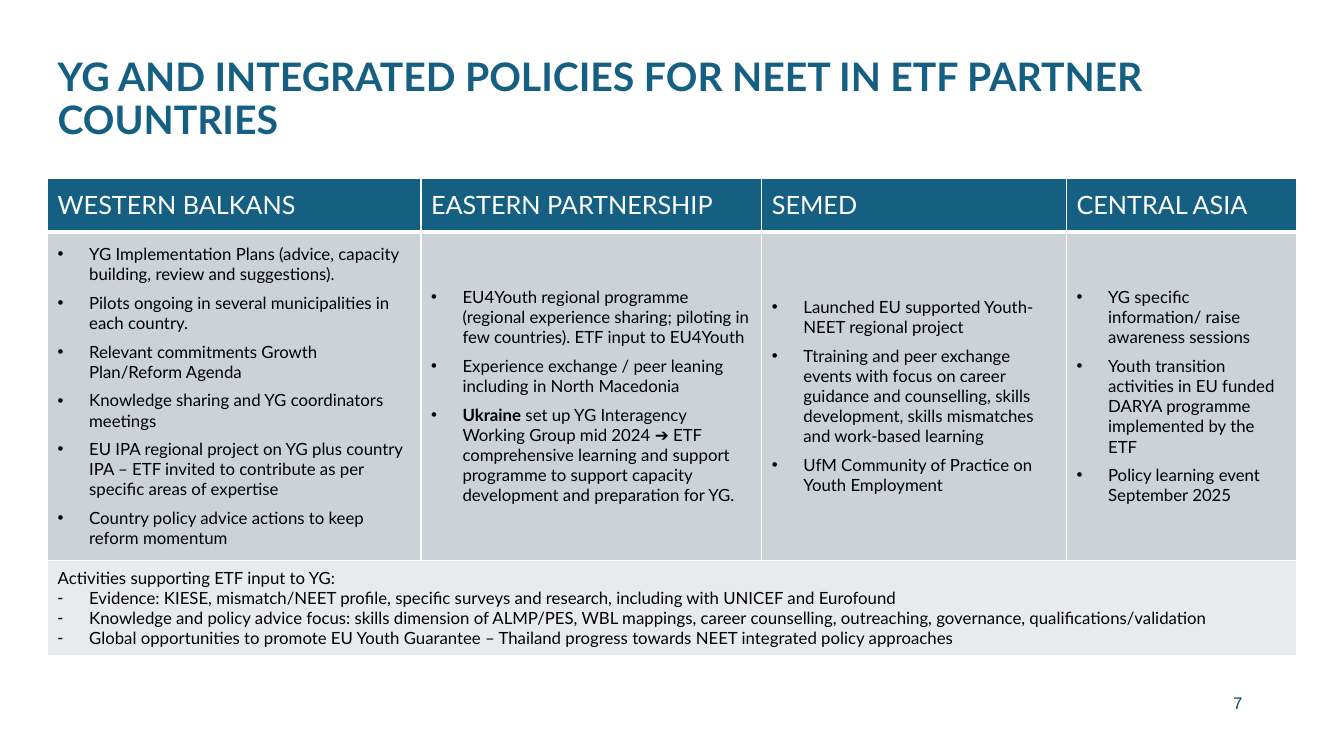
from lxml import etree
from pptx import Presentation
from pptx import util as u
from pptx.dml.color import RGBColor
from pptx.enum import text
from pptx.oxml import ns

COLORS = {"blue": "156082", "grey": "CCD2D8", "pale": "E8EAED",
          "white": "FFFFFF", "black": "000000", "number": "104862"}
INDENT = u.Pt(22.5)
REGIONS = {
    "WESTERN BALKANS": [
        "YG Implementation Plans (advice, capacity building, review and suggestions).",
        "Pilots ongoing in several municipalities in each country.",
        "Relevant commitments Growth Plan/Reform Agenda",
        "Knowledge sharing and YG coordinators meetings",
        "EU IPA regional project on YG plus country IPA – ETF invited to contribute "
        "as per specific areas of expertise",
        "Country policy advice actions to keep reform momentum"],
    "EASTERN PARTNERSHIP": [
        "EU4Youth regional programme (regional experience sharing; piloting in few "
        "countries). ETF input to EU4Youth",
        "Experience exchange / peer leaning including in North Macedonia",
        ("Ukraine", " set up YG Interagency Working Group mid 2024 ➔ ETF comprehensive "
         "learning and support programme to support capacity development and "
         "preparation for YG.")],
    "SEMED": [
        "Launched EU supported Youth-NEET regional project",
        "Ttraining and peer exchange events with focus on career guidance and "
        "counselling, skills development, skills mismatches and work-based learning",
        "UfM Community of Practice on Youth Employment"],
    "CENTRAL ASIA": [
        "YG specific information/ raise awareness sessions",
        "Youth transition activities in EU funded DARYA programme implemented by the ETF",
        "Policy learning event September 2025"],
}
SUPPORT_HEADING = "Activities supporting ETF input to YG:"
SUPPORT = [
    "Evidence: KIESE, mismatch/NEET profile, specific surveys and research, "
    "including with UNICEF and Eurofound",
    "Knowledge and policy advice focus: skills dimension of ALMP/PES, WBL mappings, "
    "career counselling, outreaching, governance, qualifications/validation",
    "Global opportunities to promote EU Youth Guarantee – Thailand progress towards "
    "NEET integrated policy approaches"]


def style_runs(paragraph, size, color, bold=False, font="Lato"):
    """Give every run of a paragraph the same look."""
    for run in paragraph.runs:
        run.font.name, run.font.size, run.font.bold = font, u.Pt(size), bold
        run.font.color.rgb = RGBColor.from_string(COLORS[color])


def add_bullet(paragraph, mark):
    """Hang a bullet mark in front of a paragraph."""
    properties = paragraph._p.get_or_add_pPr()
    properties.set("marL", str(INDENT))
    properties.set("indent", str(-INDENT))
    etree.SubElement(properties, ns.qn("a:buFont"), typeface="Arial")
    etree.SubElement(properties, ns.qn("a:buChar"), char=mark)


def style_cell(cell, fill, bottom=1):
    """Fill a cell, centre it vertically and draw its white borders."""
    cell.vertical_anchor = text.MSO_ANCHOR.MIDDLE
    cell.fill.solid()
    cell.fill.fore_color.rgb = RGBColor.from_string(COLORS[fill])
    properties = cell._tc.get_or_add_tcPr()
    for index, (side, width) in enumerate(zip("LRTB", (1, 1, 1, bottom))):
        line = etree.Element(ns.qn(f"a:ln{side}"), w=str(u.Pt(width)))
        solid = etree.SubElement(line, ns.qn("a:solidFill"))
        etree.SubElement(solid, ns.qn("a:srgbClr"), val=COLORS["white"])
        properties.insert(index, line)


def fill_region(cell, items):
    """Write the bulleted activities of one region."""
    frame = cell.text_frame
    for index, item in enumerate(items):
        paragraph = frame.add_paragraph() if index else frame.paragraphs[0]
        add_bullet(paragraph, "•")
        if index:
            paragraph.space_before = u.Pt(6)
        if isinstance(item, tuple):
            for part in item:
                paragraph.add_run().text = part
        else:
            paragraph.text = item
        style_runs(paragraph, 12, "black")
        if isinstance(item, tuple):
            paragraph.runs[0].font.bold = True


def fill_support(cell):
    """Write the heading and dashed list of supporting activities."""
    frame = cell.text_frame
    frame.text = "\n".join([SUPPORT_HEADING] + SUPPORT)
    for index, paragraph in enumerate(frame.paragraphs):
        if index:
            add_bullet(paragraph, "-")
        style_runs(paragraph, 12, "black")


def add_title(slide, left, top, width, height):
    """Place and format the slide title."""
    title = slide.shapes.title
    title.left, title.top, title.width, title.height = map(u.Pt, (left, top, width, height))
    frame = title.text_frame
    frame.text = "YG AND INTEGRATED POLICIES FOR NEET IN ETF PARTNER COUNTRIES"
    frame.vertical_anchor = text.MSO_ANCHOR.MIDDLE
    frame.auto_size = text.MSO_AUTO_SIZE.NONE
    frame.word_wrap = True
    paragraph = frame.paragraphs[0]
    paragraph.alignment = text.PP_ALIGN.LEFT
    paragraph.line_spacing = 0.9
    style_runs(paragraph, 28, "blue", bold=True)


def add_regions_table(slide, left, top, width, height):
    """Build the table of regions with the supporting activities below."""
    table = slide.shapes.add_table(3, len(REGIONS), *map(u.Pt, (left, top, width, height))).table
    table.horz_banding = False
    for column, share in zip(table.columns, (0.299, 0.273, 0.244, 0.184)):
        column.width = u.Pt(width * share)
    for row, share in zip(table.rows, (0.112, 0.689, 0.199)):
        row.height = u.Pt(height * share)
    for index, (region, items) in enumerate(REGIONS.items()):
        header, body = table.cell(0, index), table.cell(1, index)
        header.text_frame.text = region
        style_runs(header.text_frame.paragraphs[0], 18, "white")
        style_cell(header, "blue", bottom=3)
        fill_region(body, items)
        style_cell(body, "grey")
        style_cell(table.cell(2, index), "pale")
    table.cell(2, 0).merge(table.cell(2, len(REGIONS) - 1))
    fill_support(table.cell(2, 0))


def add_page_number(slide, left, top, width, height):
    """Place the page number at the right of its box."""
    frame = slide.shapes.add_textbox(*map(u.Pt, (left, top, width, height))).text_frame
    frame.word_wrap = True
    frame.vertical_anchor = text.MSO_ANCHOR.MIDDLE
    frame.text = "7"
    frame.paragraphs[0].alignment = text.PP_ALIGN.RIGHT
    style_runs(frame.paragraphs[0], 12, "number", font="Arial")


def main():
    """Build and save the presentation."""
    presentation = Presentation()
    presentation.slide_width, presentation.slide_height = u.Pt(960), u.Pt(540)
    slide = presentation.slides.add_slide(presentation.slide_layouts[5])
    add_title(slide, 34, 53, 892, 37.5)
    add_regions_table(slide, 34, 127.5, 892, 340.5)
    add_page_number(slide, 775.5, 487.5, 119, 29)
    presentation.save("out.pptx")


if __name__ == "__main__":
    main()
